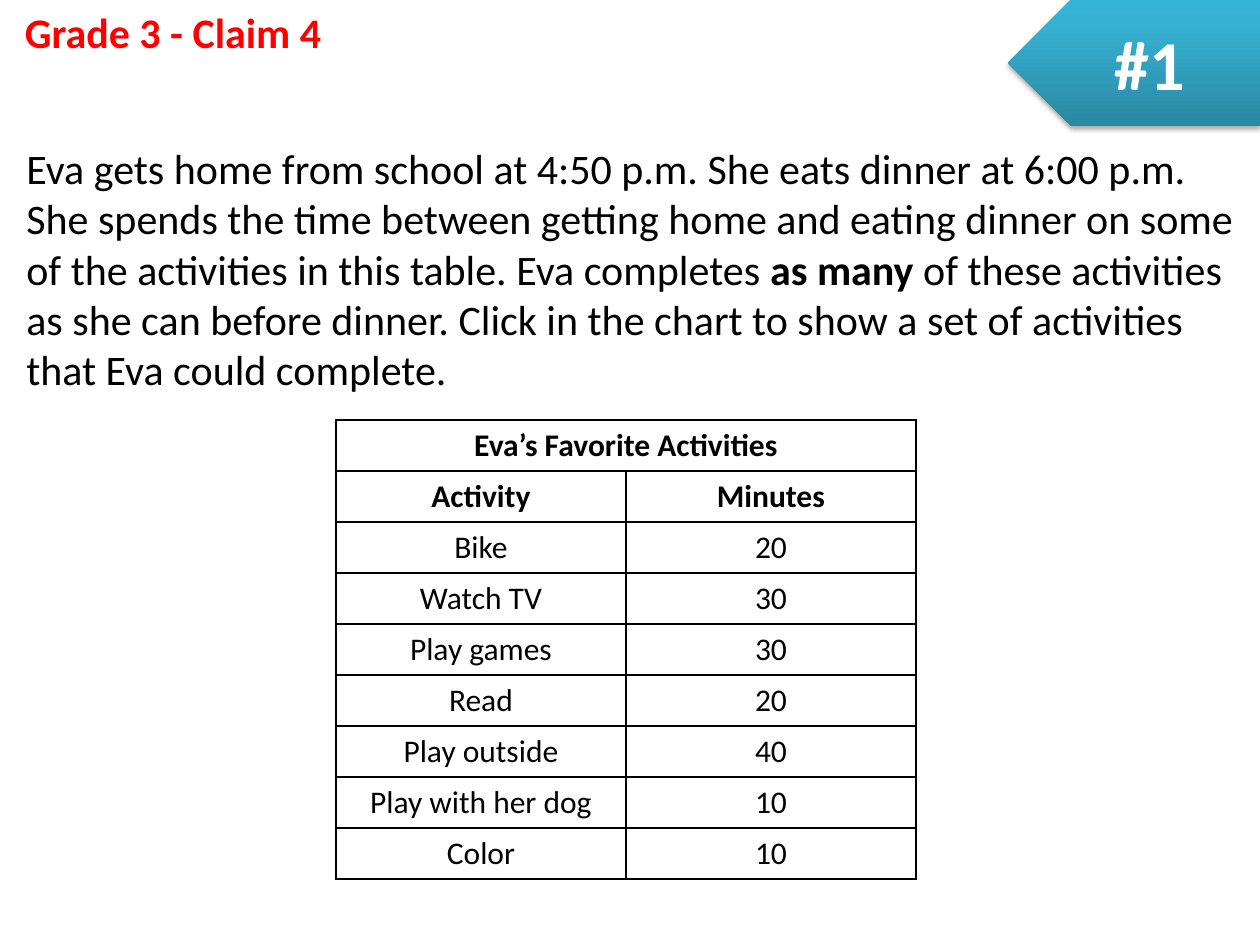
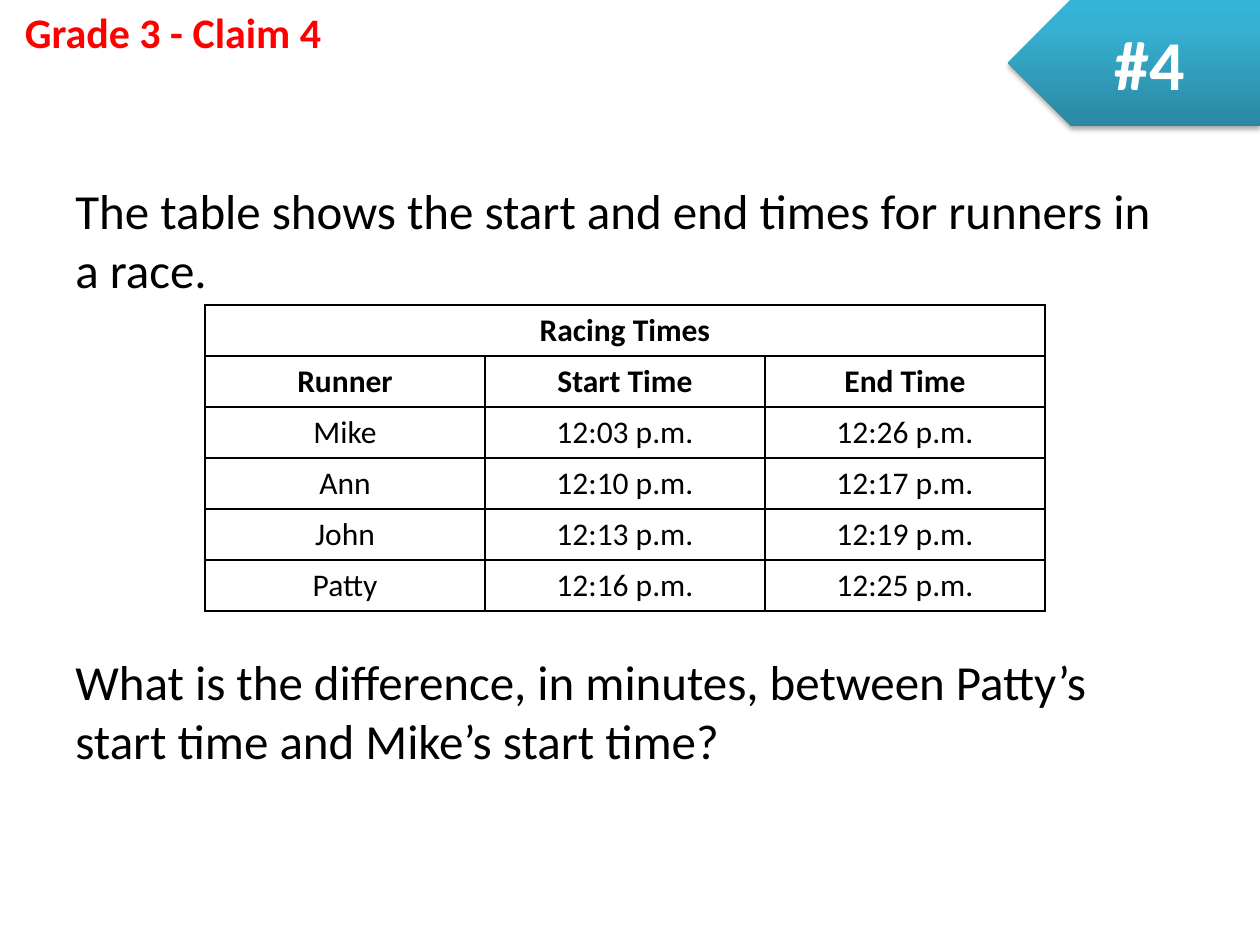
from copy import deepcopy

from lxml import etree
from pptx import Presentation
from pptx.dml.color import RGBColor
from pptx.enum.shapes import MSO_SHAPE
from pptx.enum.text import MSO_ANCHOR, PP_ALIGN
from pptx.oxml.ns import qn
from pptx.util import Emu, Pt

EMU_PER_INCH, PX_PER_INCH = 914400, 126
LEFT, CENTER = PP_ALIGN.LEFT, PP_ALIGN.CENTER
TOP, MIDDLE = MSO_ANCHOR.TOP, MSO_ANCHOR.MIDDLE
PENTAGON = MSO_SHAPE.PENTAGON

FONT = "Calibri"
COLORS = {
    "text": "000000",
    "heading": "FF0000",
    "badge_text": "FFFFFF",
    "badge_bottom": "2A88A2",
    "badge_middle": "37B1D2",
    "badge_top": "34B4D6",
    "shadow": "000000",
    "border": "000000",
}
BADGE_STOPS = [(0, "badge_bottom"), (0.8, "badge_middle"), (1, "badge_top")]
ROW_HEIGHT = 51

EVA_STORY = [
    ("Eva gets home from school at 4:50 p.m. She eats dinner at 6:00 p.m. "
     "She spends the time between getting home and eating dinner on some of "
     "the activities in this table. Eva completes ", False),
    ("as many ", True),
    ("of these activities as she can before dinner. Click in the chart to "
     "show a set of activities that Eva could complete.", False),
]
EVA_ROWS = [
    ("Activity", "Minutes"),
    ("Bike", "20"),
    ("Watch TV", "30"),
    ("Play games", "30"),
    ("Read", "20"),
    ("Play outside", "40"),
    ("Play with her dog", "10"),
    ("Color", "10"),
]
RACE_INTRO = "The table shows the start and end times for runners in a race."
RACE_QUESTION = ("What is the difference, in minutes, between Patty’s start "
                 "time and Mike’s start time?")
RACE_ROWS = [
    ("Runner", "Start Time", "End Time"),
    ("Mike", "12:03 p.m.", "12:26 p.m."),
    ("Ann", "12:10 p.m.", "12:17 p.m."),
    ("John", "12:13 p.m.", "12:19 p.m."),
    ("Patty", "12:16 p.m.", "12:25 p.m."),
]


def px(length):
    return Emu(round(length * EMU_PER_INCH / PX_PER_INCH))


def rgb(name):
    return RGBColor.from_string(COLORS[name])


def write_text(frame, paragraphs, size=18, color="text", bold=False,
               align=LEFT, anchor=TOP, gap=0):
    """Fill a text frame; a paragraph is a string or a list of (text, bold)."""
    frame.word_wrap = True
    frame.vertical_anchor = anchor
    for index, content in enumerate(paragraphs):
        paragraph = frame.paragraphs[0] if index == 0 else frame.add_paragraph()
        paragraph.alignment = align
        paragraph.space_before = Pt(gap if index else 0)
        runs = [(content, bold)] if isinstance(content, str) else content
        for text, run_bold in runs:
            run = paragraph.add_run()
            run.text = text
            run.font.name = FONT
            run.font.size = Pt(size)
            run.font.bold = run_bold
            run.font.color.rgb = rgb(color)


def add_text(slide, left, top, width, height, paragraphs, **text_format):
    box = slide.shapes.add_textbox(px(left), px(top), px(width), px(height))
    write_text(box.text_frame, paragraphs, **text_format)


def fill_gradient(shape, stops):
    """Fill upwards through the (position, colour name) stops."""
    shape.fill.gradient()
    shape.fill.gradient_angle = 90
    stop_list = shape._element.spPr.find(".//" + qn("a:gsLst"))
    while len(stop_list) < len(stops):
        stop_list.append(deepcopy(stop_list[-1]))
    for stop, (position, color) in zip(shape.fill.gradient_stops, stops):
        stop.position = position
        stop.color.rgb = rgb(color)


def add_shadow(shape):
    shape.shadow.inherit = False
    effects = shape._element.spPr.find(qn("a:effectLst"))
    shadow = etree.SubElement(effects, qn("a:outerShdw"), blurRad=str(Pt(3.1)),
                              dist=str(Pt(1.8)), dir="5400000", rotWithShape="0")
    color = etree.SubElement(shadow, qn("a:srgbClr"), val=COLORS["shadow"])
    etree.SubElement(color, qn("a:alpha"), val="35000")


def add_badge(slide, label):
    badge = slide.shapes.add_shape(PENTAGON, px(1008), px(0), px(252), px(126))
    badge._element.spPr.xfrm.set("flipH", "1")
    fill_gradient(badge, BADGE_STOPS)
    badge.line.fill.background()
    add_shadow(badge)
    write_text(badge.text_frame, [label], size=40, color="badge_text", bold=True,
               align=CENTER, anchor=MIDDLE)


def set_borders(cell):
    properties = cell._tc.get_or_add_tcPr()
    for side in ("lnL", "lnR", "lnT", "lnB"):
        line = etree.SubElement(properties, qn(f"a:{side}"), w=str(Pt(1)))
        fill = etree.SubElement(line, qn("a:solidFill"))
        etree.SubElement(fill, qn("a:srgbClr"), val=COLORS["border"])


def add_data_table(slide, left, top, column_width, title, rows):
    """Add a grid with a merged title row above a bold header row."""
    columns = len(rows[0])
    row_count = len(rows) + 1
    table = slide.shapes.add_table(
        row_count, columns, px(left), px(top),
        px(column_width * columns), px(ROW_HEIGHT * row_count)).table
    table.first_row = table.horz_banding = False
    for column in table.columns:
        column.width = px(column_width)
    for row in table.rows:
        row.height = px(ROW_HEIGHT)
    for cell in table.iter_cells():
        set_borders(cell)
        cell.fill.background()
    table.cell(0, 0).merge(table.cell(0, columns - 1))

    for row_index, values in enumerate([(title,), *rows]):
        for column_index, value in enumerate(values):
            cell = table.cell(row_index, column_index)
            cell.vertical_anchor = MIDDLE
            write_text(cell.text_frame, [value], bold=row_index < 2,
                       align=CENTER, anchor=None)


def add_question_slide(presentation, number):
    slide = presentation.slides.add_slide(presentation.slide_layouts[6])
    add_text(slide, 0, 0, 346, 63, ["Grade 3 - Claim 4"], size=24,
             color="heading", bold=True, align=CENTER)
    add_badge(slide, f"#{number}")
    return slide


def main():
    presentation = Presentation()
    presentation.slide_width, presentation.slide_height = px(1260), px(945)

    activities = add_question_slide(presentation, 1)
    add_text(activities, 14, 136, 1236, 273, [EVA_STORY], size=24)
    add_data_table(activities, 336, 420, 290, "Eva’s Favorite Activities", EVA_ROWS)

    race = add_question_slide(presentation, 4)
    add_text(race, 63, 174, 1124, 627, [RACE_INTRO, RACE_QUESTION], size=28, gap=202)
    add_data_table(race, 205, 305, 280, "Racing Times", RACE_ROWS)

    presentation.save("out.pptx")


if __name__ == "__main__":
    main()
